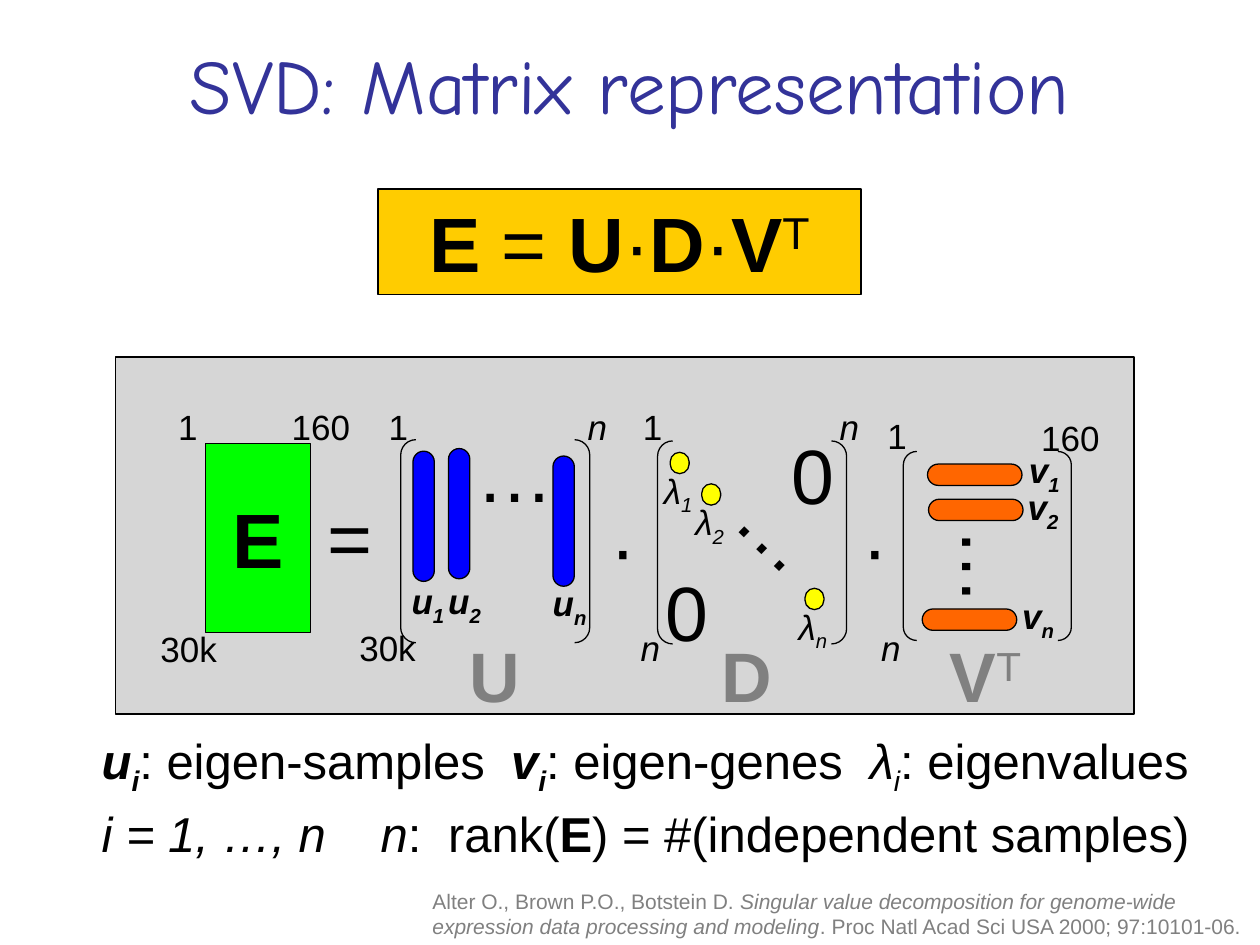
import pptx
import pptx.dml.color
import pptx.enum.shapes
import pptx.enum.text
import pptx.util
from lxml import etree
from pptx.oxml.ns import qn

Pt = pptx.util.Pt
RGBColor = pptx.dml.color.RGBColor
SHAPE = pptx.enum.shapes.MSO_SHAPE
ALIGN = pptx.enum.text.PP_ALIGN
ANCHOR = pptx.enum.text.MSO_ANCHOR

BLACK = RGBColor(0x00, 0x00, 0x00)
GRAY = RGBColor(0x80, 0x80, 0x80)
INDIGO = RGBColor(0x33, 0x33, 0x99)
GOLD = RGBColor(0xFF, 0xCC, 0x00)
GREEN = RGBColor(0x00, 0xFF, 0x00)
BLUE = RGBColor(0x00, 0x00, 0xFF)
YELLOW = RGBColor(0xFF, 0xFF, 0x00)
ORANGE = RGBColor(0xFF, 0x66, 0x00)

BASELINES = {"^": "30000", "_": "-25000"}
LINE_HEIGHT = {20: 31.2, 40: 55.4, 44: 60}


def add_runs(paragraph, runs, size, color=BLACK, font="Arial"):
    for text, style in runs:
        run = paragraph.add_run()
        run.text = text
        run.font.name = font
        run.font.size = Pt(size)
        run.font.color.rgb = color
        run.font.bold = "b" in style
        run.font.italic = "i" in style
        for mark, baseline in BASELINES.items():
            if mark in style:
                run._r.get_or_add_rPr().set("baseline", baseline)


def add_label(shapes, left, top, width, runs, size=20, color=BLACK, rotation=0):
    label = shapes.add_textbox(Pt(left), Pt(top), Pt(width), Pt(LINE_HEIGHT[size]))
    label.rotation = rotation
    label.text_frame.word_wrap = False
    paragraph = label.text_frame.paragraphs[0]
    paragraph.alignment = ALIGN.CENTER
    add_runs(paragraph, runs, size, color)


def add_outlined(shapes, kind, box, fill=None, adjustment=None):
    shape = shapes.add_shape(kind, *map(Pt, box))
    shape.shadow.inherit = False
    shape.line.color.rgb = BLACK
    shape.line.width = Pt(0.75)
    if fill is None:
        shape.fill.background()
    else:
        shape.fill.solid()
        shape.fill.fore_color.rgb = fill
    if adjustment is not None:
        shape.adjustments[0] = adjustment
    return shape


def add_brackets(shapes, box):
    add_outlined(shapes, SHAPE.DOUBLE_BRACKET, box, adjustment=0.08)


def add_pill(shapes, box, fill):
    add_outlined(shapes, SHAPE.ROUNDED_RECTANGLE, box, fill, 0.5)


def draw_title(slide, box):
    title = slide.shapes.title
    title.left, title.top, title.width, title.height = map(Pt, box)
    title.text_frame.vertical_anchor = ANCHOR.MIDDLE
    paragraph = title.text_frame.paragraphs[0]
    paragraph.alignment = ALIGN.CENTER
    add_runs(paragraph, [("SVD: Matrix representation", "")], 44, INDIGO, "Comic Neue")


def draw_formula(slide, box):
    formula = add_outlined(slide.shapes, SHAPE.RECTANGLE, box, GOLD)
    formula.text_frame.vertical_anchor = ANCHOR.TOP
    paragraph = formula.text_frame.paragraphs[0]
    paragraph.alignment = ALIGN.CENTER
    add_runs(paragraph, [("E", "b"), (" = ", ""), ("U", "b"), ("·", ""), ("D", "b"),
                         ("·", ""), ("V", "b"), ("T", "^")], 44)


def draw_data_matrix(slide, box):
    x, y, width, height = box
    shapes = slide.shapes.add_group_shape().shapes
    matrix = add_outlined(shapes, SHAPE.RECTANGLE, box, GREEN)
    matrix.text_frame.word_wrap = False
    matrix.text_frame.vertical_anchor = ANCHOR.MIDDLE
    paragraph = matrix.text_frame.paragraphs[0]
    paragraph.alignment = ALIGN.CENTER
    add_runs(paragraph, [("E", "b")], 44)
    add_label(shapes, x + width - 18, y - 25, 48, [("160", "")])
    add_label(shapes, x - 23, y - 25, 26, [("1", "")])
    add_label(shapes, x - 33, y + height - 6.5, 47, [("30k", "")])


def draw_eigen_samples(slide, box):
    x, y, width, height = box
    shapes = slide.shapes
    add_brackets(shapes, box)
    for dx, dy in ((7, 6.5), (27.3, 5), (87, 9.3)):
        add_pill(shapes, (x + dx, y + dy, 12.2, 74.4), BLUE)
    for index, dx, dy in (("1", -1.5, 76.3), ("2", 19.4, 76.3), ("n", 79.5, 77.7)):
        add_label(shapes, x + dx, y + dy, 34, [("u", "bi"), (index, "bi_")])
    add_label(shapes, x + 36, y - 11.5, 58, [("…", "")], 44)
    add_label(shapes, x - 14.4, y - 23, 26, [("1", "")])
    add_label(shapes, x + width - 8.7, y - 23, 26, [("n", "i")])
    add_label(shapes, x - 31, y + height - 13, 47, [("30k", "")])
    add_label(shapes, x + 32.4, y + 106.5, 43, [("U", "b")], 40, GRAY)


def draw_eigenvalues(slide, box):
    x, y, width, height = box
    shapes = slide.shapes
    add_brackets(shapes, box)
    for index, dx, dy in (("1", 7.2, 6.5), ("2", 25.2, 24.5), ("n", 84.2, 84.2)):
        add_pill(shapes, (x + dx, y + dy, 10.8, 12.2), YELLOW)
        add_label(shapes, x + dx - 11.5, y + dy + 6, 32, [("λ", "i"), (index, "i_")])
    add_label(shapes, x + 41, y + 21, 58, [("…", "")], 44, rotation=43.8)
    add_label(shapes, x - 2.9, y + 67, 39, [("0", "")], 44)
    add_label(shapes, x + 69, y - 11.5, 39, [("0", "")], 44)
    add_label(shapes, x - 15.8, y - 23.8, 26, [("1", "")])
    add_label(shapes, x + width - 11.5, y - 23.8, 26, [("n", "i")])
    add_label(shapes, x - 17.2, y + height - 13.7, 26, [("n", "i")])
    add_label(shapes, x + 29.5, y + 105.8, 43, [("D", "b")], 40, GRAY)


def draw_eigen_genes(slide, box):
    x, y, width, height = box
    shapes = slide.shapes
    add_brackets(shapes, box)
    for dx, dy in ((13.8, 7.2), (14.4, 27.3), (10.8, 90)):
        add_pill(shapes, (x + dx, y + dy, 54, 12.2), ORANGE)
    for index, dx, dy in (("1", 64, -5), ("2", 63.4, 15.8), ("n", 60.5, 78.4)):
        add_label(shapes, x + dx, y + dy, 33, [("v", "bi"), (index, "bi_")])
    add_label(shapes, x + 22.4, y + 36, 58, [("…", "")], 44, rotation=90)
    add_label(shapes, x - 16.5, y - 24.5, 26, [("1", "")])
    add_label(shapes, x + width - 24.5, y - 23.8, 48, [("160", "")])
    add_label(shapes, x - 20.2, y + height - 11.6, 26, [("n", "i")])
    add_label(shapes, x + 18, y + 100, 58, [("V", "b"), ("T", "^")], 40, GRAY)


def draw_decomposition(slide, box):
    x, y, _, _ = box
    panel = add_outlined(slide.shapes, SHAPE.RECTANGLE, box, GRAY)
    panel_color = panel.fill._xPr.find(qn("a:solidFill"))[0]
    etree.SubElement(panel_color, qn("a:alpha")).set("val", "32000")
    draw_data_matrix(slide, (x + 51.4, y + 49.4, 60, 108))
    add_label(slide.shapes, x + 114, y + 72, 40, [("=", "")], 44)
    draw_eigen_samples(slide, (x + 163, y + 47.3, 108, 116))
    draw_eigenvalues(slide, (x + 309.8, y + 48, 108, 116))
    draw_eigen_genes(slide, (x + 450.2, y + 54, 96, 108))
    for dx in (276, 420):
        add_label(slide.shapes, x + dx, y + 78, 26.6, [("·", "")], 44)


def draw_legend(slide, box):
    lines = (
        ((234, 439), [("u", "bi"), ("i", "bi_"), (": eigen-samples\t", ""),
                      ("v", "bi"), ("i", "bi_"), (": eigen-genes\t", ""),
                      ("λ", "i"), ("i", "i_"), (": eigenvalues", "")]),
        ((159.4, 198), [("i = 1, …, n\tn", "i"), (":\trank(", ""), ("E", "b"),
                        (") = #(independent samples)", "")]),
    )
    frame = slide.shapes.add_textbox(*map(Pt, box)).text_frame
    frame.word_wrap = True
    for number, (stops, runs) in enumerate(lines):
        paragraph = frame.add_paragraph() if number else frame.paragraphs[0]
        paragraph.line_spacing = 1.1
        tab_list = etree.SubElement(paragraph._p.get_or_add_pPr(), qn("a:tabLst"))
        for stop in stops:
            etree.SubElement(tab_list, qn("a:tab"), pos=str(int(Pt(stop))), algn="l")
        add_runs(paragraph, runs, 28)


def draw_citation(slide, box):
    frame = slide.shapes.add_textbox(*map(Pt, box)).text_frame
    frame.word_wrap = False
    frame.vertical_anchor = ANCHOR.MIDDLE
    add_runs(frame.paragraphs[0], [("Alter O., Brown P.O., Botstein D. ", ""),
                                   ("Singular value decomposition for genome-wide", "i")], 12, GRAY)
    add_runs(frame.add_paragraph(), [("expression data processing and modeling", "i"),
                                     (". Proc Natl Acad Sci USA 2000; 97:10101-06.", "")], 12, GRAY)


def main():
    deck = pptx.Presentation()
    deck.slide_width, deck.slide_height = Pt(720), Pt(540)
    slide = deck.slides.add_slide(deck.slide_layouts[5])
    draw_title(slide, (0, 0, 720, 96))
    draw_formula(slide, (216, 108, 276, 60.5))
    draw_decomposition(slide, (66, 204, 582, 204))
    draw_legend(slide, (51, 410, 648, 81))
    draw_citation(slide, (240, 504, 480, 36))
    deck.save("out.pptx")


if __name__ == "__main__":
    main()
